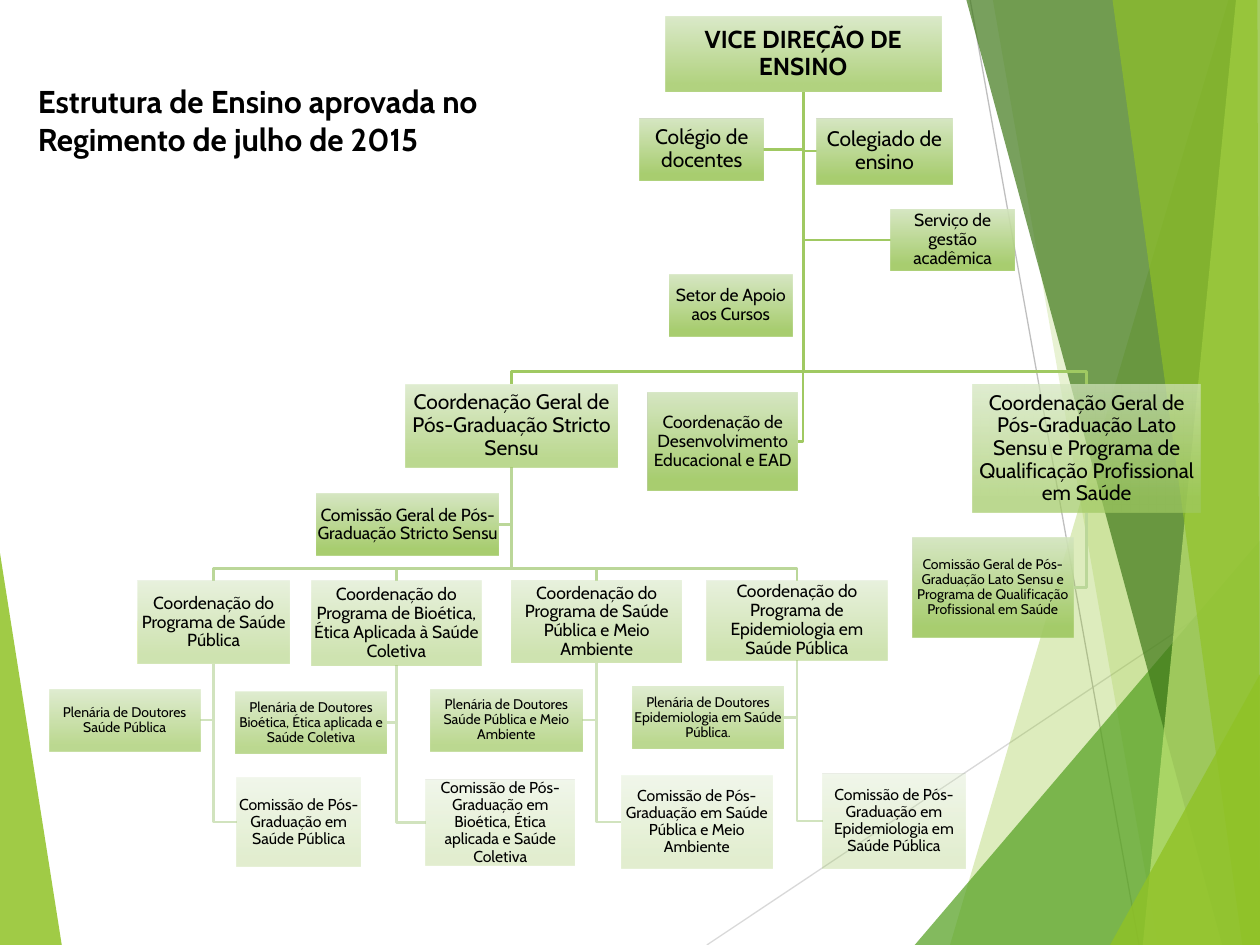
from dataclasses import dataclass, field
from typing import List, Optional, Tuple

from lxml import etree
from pptx import Presentation
from pptx import util as u
from pptx.dml.color import RGBColor
from pptx.enum import shapes, text
from pptx.oxml.ns import qn

Inches = u.Inches
Point = Tuple[float, float]
FONT = "Cabin"
BUS_GAP = 0.1  # height of the shared branch line above a row of boxes
COLORS = {
    "black": "000000", "pale": "D3E5BE", "leaf": "A0C962",
    "wire1": "A0C962", "wire2": "BBD799", "wire3": "D1E3BE",
    "lime": "90C226", "green": "54A021", "dark": "3F7819", "light": "C0E474",
    "ray1": "D9D9D9", "ray2": "BFBFBF",
}


@dataclass
class Facet:
    color: str
    alpha: int
    points: List[Point]


@dataclass
class Ray:
    color: str
    start: Point
    end: Point


@dataclass
class Box:
    """One unit of the chart; link is the side its parent's line reaches."""
    label: str
    x: float
    y: float
    w: float
    h: float
    size: int
    alpha: int
    link: Optional[str] = None
    wire: str = "wire1"
    bold: bool = False
    kids: List["Box"] = field(default_factory=list)


def program(label: str, x: float, w: float, h: float, board: Box, panel: Box) -> Box:
    return Box(label, x, 4.61, w, h, 10, 50, "top", "wire3", kids=[board, panel])


def board(label: str, x: float, y: float) -> Box:
    return Box(label, x, y, 1.2, 0.49, 8, 70, "right")


def panel(label: str, x: float, y: float, w: float, h: float) -> Box:
    return Box(label, x, y, w, h, 9, 30, "left")


FACETS = [
    Facet("lime", 85, [(0, 4.39), (0.49, 7.5), (0, 7.5)]),
    Facet("lime", 30, [(9.75, 0), (7.54, 7.5), (10, 7.5), (10, 0)]),
    Facet("lime", 20, [(7.88, 0), (9.19, 7.5), (10, 7.5), (10, 0)]),
    Facet("green", 72, [(7.26, 7.5), (10, 4.29), (10, 7.5)]),
    Facet("dark", 70, [(7.67, 0), (9.7, 7.5), (10, 7.5), (10, 0)]),
    Facet("light", 70, [(9.81, 0), (9.07, 7.5), (10, 7.5), (10, 0)]),
    Facet("lime", 65, [(8.83, 0), (9.86, 7.5), (10, 7.5), (9.98, 0)]),
    Facet("lime", 80, [(8.81, 7.5), (10, 5.35), (10, 7.5)]),
]
RAYS = [
    Ray("ray1", (5.61, 7.5), (10, 4.57)),
    Ray("ray2", (7.7, 0), (9.04, 7.5)),
]

PROGRAMS = [
    program("Coordenação do Programa de Saúde Pública", 1.09, 1.21, 0.66,
            board("Plenária de Doutores Saúde Pública", 0.39, 5.47),
            panel("Comissão de Pós-Graduação em Saúde Pública", 1.88, 6.17, 0.98, 0.71)),
    program("Coordenação do Programa de Bioética, Ética Aplicada à Saúde Coletiva",
            2.47, 1.35, 0.67,
            board("Plenária de Doutores Bioética, Ética aplicada e Saúde Coletiva", 1.87, 5.49),
            panel("Comissão de Pós-Graduação em Bioética, Ética aplicada e Saúde Coletiva",
                  3.38, 6.19, 1.18, 0.68)),
    program("Coordenação do Programa de Saúde Pública e Meio Ambiente", 4.06, 1.35, 0.65,
            board("Plenária de Doutores Saúde Pública e Meio Ambiente", 3.42, 5.47),
            panel("Comissão de Pós-Graduação em Saúde Pública e Meio Ambiente",
                  4.93, 6.16, 1.2, 0.73)),
    program("Coordenação do Programa de Epidemiologia em Saúde Pública", 5.61, 1.43, 0.63,
            board("Plenária de Doutores Epidemiologia em Saúde Pública.", 5.02, 5.45),
            panel("Comissão de Pós-Graduação em Epidemiologia em Saúde Pública",
                  6.53, 6.14, 1.13, 0.75)),
]
STRICTO = Box("Coordenação Geral de Pós-Graduação Stricto Sensu",
              3.22, 3.05, 1.68, 0.66, 12, 70, "top", "wire2", kids=PROGRAMS + [
                  Box("Comissão Geral de Pós-Graduação Stricto Sensu",
                      2.51, 3.92, 1.45, 0.49, 10, 90, "right")])
LATO = Box("Coordenação Geral de Pós-Graduação Lato Sensu e Programa de "
           "Qualificação Profissional em Saúde",
           7.72, 3.05, 1.81, 1.02, 12, 70, "top", "wire2", kids=[
               Box("Comissão Geral de Pós-Graduação Lato Sensu e Programa de "
                   "Qualificação Profissional em Saúde",
                   7.24, 4.27, 1.28, 0.79, 8, 90, "right")])
ROOT = Box("VICE DIREÇÃO DE ENSINO", 5.28, 0.13, 2.19, 0.6, 14, 80, bold=True, kids=[
    STRICTO, LATO,
    Box("Colégio de docentes", 5.08, 0.94, 0.98, 0.49, 12, 90, "right"),
    Box("Colegiado de ensino", 6.48, 0.94, 1.08, 0.52, 12, 90, "left"),
    Box("Coordenação de Desenvolvimento Educacional e EAD",
        5.14, 3.12, 1.19, 0.77, 10, 90, "right"),
    Box("Serviço de gestão acadêmica", 7.07, 1.66, 0.98, 0.49, 10, 90, "left"),
    Box("Setor de Apoio aos Cursos", 5.31, 2.18, 0.98, 0.49, 10, 90),
])


def rgb(name: str) -> RGBColor:
    return RGBColor.from_string(COLORS[name])


def fade(shape, alpha: int) -> None:
    """Set the opacity, in percent, of every colour in the shape's fill."""
    for tone in shape._element.spPr.iter(qn("a:srgbClr")):
        etree.SubElement(tone, qn("a:alpha")).set("val", str(alpha * 1000))


def trace(slide, points: List[Point], close: bool):
    spots = [(Inches(x), Inches(y)) for x, y in points]
    pen = slide.shapes.build_freeform(*spots[0])
    pen.add_line_segments(spots[1:], close=close)
    shape = pen.convert_to_shape()
    shape.shadow.inherit = False
    return shape


def draw_facet(slide, facet: Facet) -> None:
    shape = trace(slide, facet.points, True)
    shape.fill.solid()
    shape.fill.fore_color.rgb = rgb(facet.color)
    fade(shape, facet.alpha)
    shape.line.fill.background()


def draw_ray(slide, ray: Ray) -> None:
    ends = [Inches(v) for v in ray.start + ray.end]
    line = slide.shapes.add_connector(shapes.MSO_CONNECTOR.STRAIGHT, *ends)
    line.line.color.rgb = rgb(ray.color)
    line.line.width = u.Pt(0.75)
    etree.SubElement(line._element.spPr, qn("a:effectLst"))


def draw_wires(slide, box: Box) -> None:
    """Draw the lines from the bottom of a box to its kids, then theirs."""
    trunk, base = box.x + box.w / 2, box.y + box.h
    for kid in box.kids:
        if kid.link == "top":
            mid, bus = kid.x + kid.w / 2, kid.y - BUS_GAP
            route = [(trunk, bus), (mid, bus), (mid, kid.y)]
        elif kid.link:
            level = kid.y + kid.h / 2
            edge = kid.x if kid.link == "left" else kid.x + kid.w
            route = [(trunk, level), (edge, level)]
        else:
            continue
        wire = trace(slide, [(trunk, base)] + route, False)
        wire.fill.background()
        wire.line.color.rgb = rgb(box.wire)
        wire.line.width = u.Pt(1.5)
        draw_wires(slide, kid)


def style(para, size: int, bold: bool) -> None:
    for run in para.runs:
        run.font.name, run.font.size, run.font.bold = FONT, u.Pt(size), bold
        run.font.color.rgb = rgb("black")


def draw_box(slide, box: Box) -> None:
    place = [Inches(v) for v in (box.x, box.y, box.w, box.h)]
    shape = slide.shapes.add_shape(shapes.MSO_SHAPE.RECTANGLE, *place)
    shape.shadow.inherit = False
    shape.line.fill.background()
    shape.fill.gradient()
    shape.fill.gradient_angle = 270
    for stop, spot, tone in zip(shape.fill.gradient_stops, (0, 0.88), ("pale", "leaf")):
        stop.position, stop.color.rgb = spot, rgb(tone)
    fade(shape, box.alpha)
    frame = shape.text_frame
    frame.word_wrap = True
    frame.vertical_anchor = text.MSO_ANCHOR.MIDDLE
    frame.margin_left = frame.margin_right = Inches(0.01)
    frame.margin_top = frame.margin_bottom = Inches(0.01)
    frame.text = box.label
    para = frame.paragraphs[0]
    para.alignment, para.line_spacing = text.PP_ALIGN.CENTER, 0.9
    style(para, box.size, box.bold)
    for kid in box.kids:
        draw_box(slide, kid)


def set_title(slide, label: str) -> None:
    title = slide.shapes.title
    title.left, title.top, title.width, title.height = map(Inches, (0.2, 0.6, 4.09, 0.71))
    frame = title.text_frame
    frame.text = label
    frame.word_wrap, frame.auto_size = True, text.MSO_AUTO_SIZE.NONE
    frame.vertical_anchor = text.MSO_ANCHOR.TOP
    frame.paragraphs[0].alignment = text.PP_ALIGN.LEFT
    style(frame.paragraphs[0], 18, True)


def main() -> None:
    deck = Presentation()
    deck.slide_width, deck.slide_height = Inches(10), Inches(7.5)
    slide = deck.slides.add_slide(deck.slide_layouts[5])
    set_title(slide, "Estrutura de Ensino aprovada no Regimento de julho de 2015")
    draw_facet(slide, FACETS[0])
    for ray in RAYS:
        draw_ray(slide, ray)
    for facet in FACETS[1:]:
        draw_facet(slide, facet)
    draw_wires(slide, ROOT)
    draw_box(slide, ROOT)
    deck.save("out.pptx")


if __name__ == "__main__":
    main()
